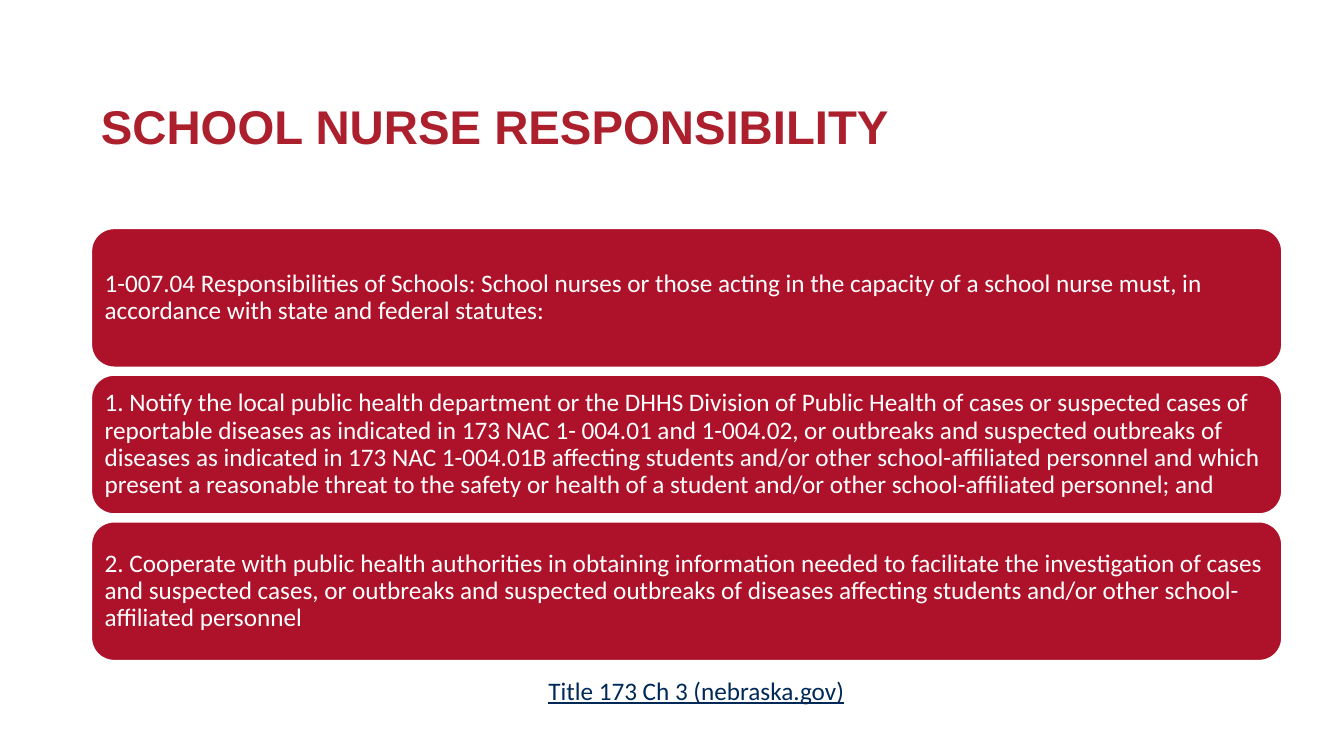
"""Build the school nurse responsibility slide."""
from pptx import Presentation
from pptx.dml.color import RGBColor
from pptx.enum.shapes import MSO_SHAPE
from pptx.enum.text import MSO_ANCHOR, MSO_AUTO_SIZE, PP_ALIGN
from pptx.util import Inches, Pt

TITLE_RED = RGBColor(0xAC, 0x1F, 0x2D)
CARD_RED = RGBColor(0xAD, 0x12, 0x2A)
NAVY = RGBColor(0x00, 0x29, 0x57)
WHITE = RGBColor(0xFF, 0xFF, 0xFF)

LEFT, WIDTH = 0.9, 11.82
CARD_TOP, CARD_HEIGHT, CARD_STEP = 2.26, 1.39, 1.455

DUTIES = [
    "1-007.04 Responsibilities of Schools: School nurses or those acting in the "
    "capacity of a school nurse must, in accordance with state and federal statutes:",
    "1. Notify the local public health department or the DHHS Division of Public "
    "Health of cases or suspected cases of reportable diseases as indicated in "
    "173 NAC 1- 004.01 and 1-004.02, or outbreaks and suspected outbreaks of "
    "diseases as indicated in 173 NAC 1-004.01B affecting students and/or other "
    "school-affiliated personnel and which present a reasonable threat to the "
    "safety or health of a student and/or other school-affiliated personnel; and",
    "2. Cooperate with public health authorities in obtaining information needed "
    "to facilitate the investigation of cases and suspected cases, or outbreaks "
    "and suspected outbreaks of diseases affecting students and/or other "
    "school-affiliated personnel",
]


def set_insets(tf, side, vertical):
    tf.margin_left = tf.margin_right = Inches(side)
    tf.margin_top = tf.margin_bottom = Inches(vertical)


def add_run(p, text, size, color, name="Calibri"):
    p.alignment = PP_ALIGN.LEFT
    r = p.add_run()
    r.text = text
    r.font.size = Pt(size)
    r.font.name = name
    r.font.color.rgb = color
    return r


def add_title(s, text):
    sp = s.shapes.title
    sp.left, sp.top = Inches(LEFT), Inches(0.43)
    sp.width, sp.height = Inches(WIDTH), Inches(1.11)
    tf = sp.text_frame
    tf.auto_size = MSO_AUTO_SIZE.NONE
    tf.vertical_anchor = MSO_ANCHOR.BOTTOM
    set_insets(tf, 0.1, 0)
    p = tf.paragraphs[0]
    p.line_spacing = 0.9
    add_run(p, text, 33.8, TITLE_RED, "Arial").font.bold = True


def add_card(s, top, text):
    sp = s.shapes.add_shape(MSO_SHAPE.ROUNDED_RECTANGLE, Inches(LEFT), Inches(top),
                            Inches(WIDTH), Inches(CARD_HEIGHT))
    sp.shadow.inherit = False
    sp.fill.solid()
    sp.fill.fore_color.rgb = CARD_RED
    sp.line.color.rgb = WHITE
    sp.line.width = Pt(2)
    tf = sp.text_frame
    tf.word_wrap = True
    tf.vertical_anchor = MSO_ANCHOR.MIDDLE
    set_insets(tf, 0.07, 0.07)
    p = tf.paragraphs[0]
    p.line_spacing = 0.9
    add_run(p, text, 18, WHITE)


def add_citation(s, text):
    sp = s.shapes.add_textbox(Inches(5.34), Inches(6.65), Inches(3.17), Inches(0.4))
    tf = sp.text_frame
    tf.word_wrap = False
    tf.auto_size = MSO_AUTO_SIZE.SHAPE_TO_FIT_TEXT
    add_run(tf.paragraphs[0], text, 18, NAVY).font.underline = True


def main():
    prs = Presentation()
    prs.slide_width, prs.slide_height = Inches(13.33), Inches(7.5)
    s = prs.slides.add_slide(prs.slide_layouts[5])
    add_title(s, "SCHOOL NURSE RESPONSIBILITY")
    for i, duty in enumerate(DUTIES):
        add_card(s, CARD_TOP + i * CARD_STEP, duty)
    add_citation(s, "Title 173 Ch 3 (nebraska.gov)")
    prs.save("out.pptx")


if __name__ == "__main__":
    main()
